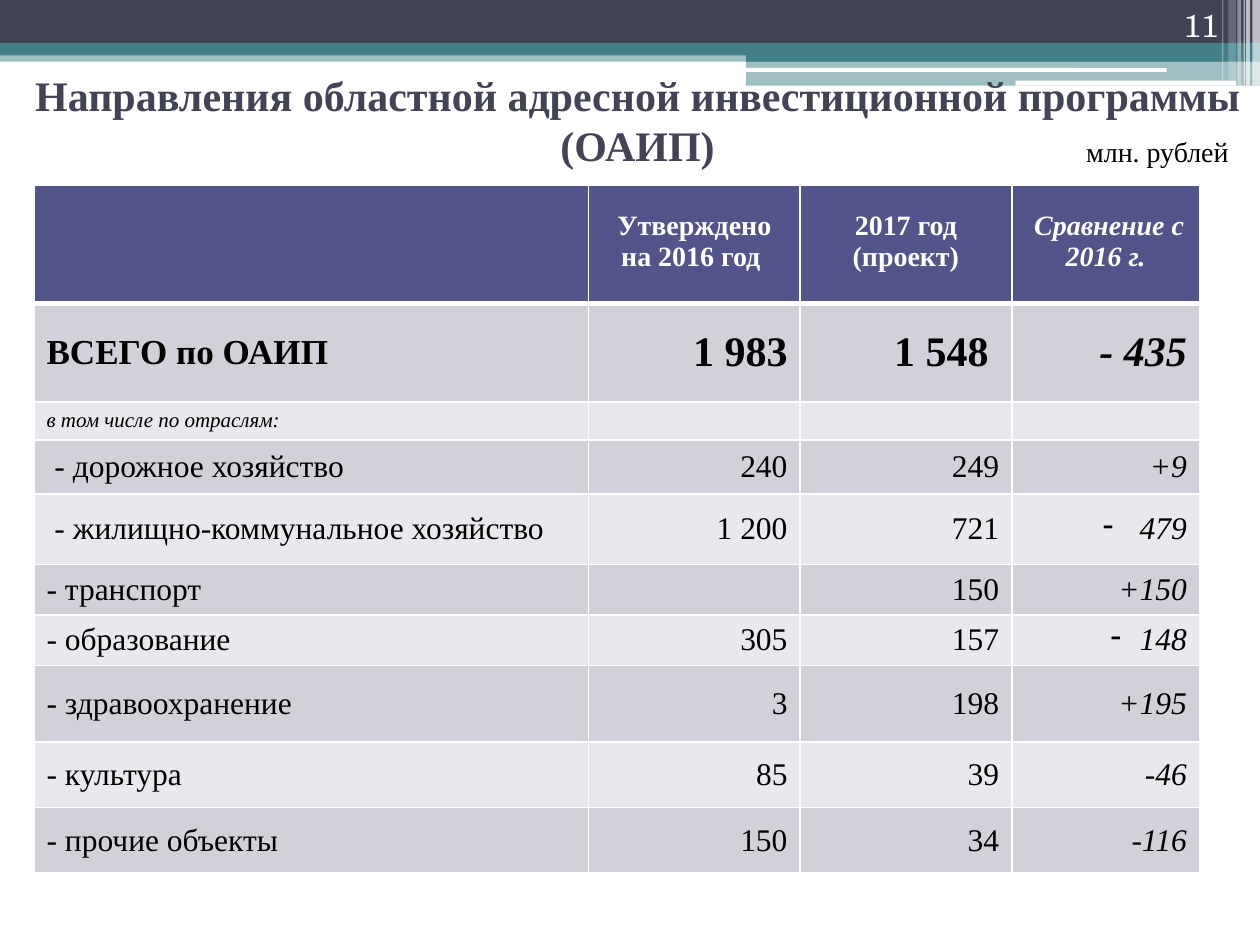
from pptx import Presentation
from pptx.dml.color import RGBColor
from pptx.enum.shapes import MSO_SHAPE
from pptx.enum.text import MSO_ANCHOR, PP_ALIGN
from pptx.oxml.ns import qn
from pptx.util import Inches, Pt
from lxml import etree

RECT, ROUND = MSO_SHAPE.RECTANGLE, MSO_SHAPE.ROUNDED_RECTANGLE
LEFT, CENTER, RIGHT = PP_ALIGN.LEFT, PP_ALIGN.CENTER, PP_ALIGN.RIGHT
TOP, MIDDLE, BOTTOM = MSO_ANCHOR.TOP, MSO_ANCHOR.MIDDLE, MSO_ANCHOR.BOTTOM

THEME = {
    "serif": "Times New Roman", "number": "TeX Gyre Schola",
    "navy": "424456", "teal": "438086", "white": "FFFFFF", "black": "000000",
    "head": "53548A", "bands": ("D1D1DA", "E9E9ED"),
    "title": 24, "label": 16, "body": 18, "total": 20, "sum": 24, "note": 12,
}

# shape, left, top, width, height, colour, opacity in percent
DECOR = [
    (RECT, 0, 0.4, 10, 0.09, "teal", 50),
    (RECT, 0, 0, 10, 0.34, "navy", 100),
    (RECT, 0, 0.34, 10, 0.1, "teal", 100),
    (RECT, 5.92, 0.39, 4.08, 0.1, "teal", 100),
    (RECT, 5.92, 0.48, 4.08, 0.2, "teal", 50),
    (ROUND, 5.91, 0.54, 3.35, 0.03, "white", 100),
    (ROUND, 8.06, 0.64, 1.75, 0.04, "white", 100),
    (RECT, 9.94, 0, 0.06, 0.68, "white", 65),
    (RECT, 9.89, 0, 0.03, 0.68, "white", 65),
    (RECT, 9.87, 0, 0.01, 0.68, "white", 60),
    (RECT, 9.82, 0, 0.03, 0.68, "white", 40),
    (RECT, 9.75, 0, 0.06, 0.64, "white", 20),
    (RECT, 9.7, 0, 0.01, 0.64, "white", 30),
]

TITLE = "Направления областной адресной инвестиционной программы\v(ОАИП)"
UNIT = " млн. рублей"
PAGE = "11"

COLS = [4.4, 1.68, 1.68, 1.49]
# A "•" before a value marks a paragraph with a dash bullet.
ROWS = [
    (0.94, "", "Утверждено на 2016 год ", "2017 год\n(проект)", " Сравнение с 2016 г."),
    (0.78, "ВСЕГО по ОАИП", "1 983", " 1 548 ", "- 435"),
    (0.28, "в том числе по отраслям:", "", "", ""),
    (0.43, " - дорожное хозяйство", "240", "249", "+9"),
    (0.56, " - жилищно-коммунальное хозяйство", "1 200", "721", "• 479"),
    (0.38, "- транспорт", "", "150", "+150"),
    (0.38, "- образование", "305", "157", "•148"),
    (0.61, "- здравоохранение", "3", "198", "+195"),
    (0.52, "- культура", "85", "39", "-46"),
    (0.52, "- прочие объекты", "150", "34", "-116"),
]
HEAD, TOTAL, NOTE = 0, 1, 2


def rgb(color):
    return RGBColor.from_string(color)


def style(par, size, color, align, bold=False, italic=False, face="serif"):
    par.alignment = align
    font = par.font
    font.name, font.size = THEME[face], Pt(size)
    font.bold, font.italic = bold, italic
    font.color.rgb = rgb(color)


def add_bar(slide, kind, x, y, w, h, color, alpha):
    bar = slide.shapes.add_shape(kind, Inches(x), Inches(y), Inches(w), Inches(h))
    bar.shadow.inherit = False
    bar.line.fill.background()
    bar.fill.solid()
    bar.fill.fore_color.rgb = rgb(THEME[color])
    if alpha < 100:
        tone = bar.fill._xPr.find(".//" + qn("a:srgbClr"))
        etree.SubElement(tone, qn("a:alpha"), val=str(alpha * 1000))


def add_text(slide, box, text, anchor, *look, **more):
    frame = slide.shapes.add_textbox(*map(Inches, box)).text_frame
    frame.word_wrap = True
    frame.vertical_anchor = anchor
    frame.text = text
    style(frame.paragraphs[0], *look, **more)


def add_dash(par):
    """Give a paragraph a hanging dash bullet."""
    props = par._p.get_or_add_pPr()
    props.set("marL", str(Inches(0.23)))
    props.set("indent", str(-Inches(0.23)))
    dash = etree.Element(qn("a:buChar"), char="-")
    props.insert(0, dash)


def set_border(cell, base):
    """Draw white cell edges, with the bottom one as wide as base points."""
    props = cell._tc.get_or_add_tcPr()
    for i, (side, width) in enumerate((("L", 1), ("R", 1), ("T", 1), ("B", base))):
        line = etree.Element(qn("a:ln" + side), w=str(Pt(width)))
        fill = etree.SubElement(line, qn("a:solidFill"))
        etree.SubElement(fill, qn("a:srgbClr"), val=THEME["white"])
        props.insert(i, line)


def cell_look(row, col):
    """Return size, colour, alignment, bold and italic for a cell."""
    if row == HEAD:
        return THEME["label"], THEME["white"], CENTER, True, col == 3
    size = THEME["body"]
    if row == TOTAL:
        size = THEME["sum" if col else "total"]
    elif row == NOTE:
        size = THEME["note"]
    align = RIGHT if col else LEFT
    return size, THEME["black"], align, row == TOTAL, col == 3 or row == NOTE


def fill_cell(cell, row, col, text):
    cell.fill.solid()
    tone = THEME["head"] if row == HEAD else THEME["bands"][(row - 1) % 2]
    cell.fill.fore_color.rgb = rgb(tone)
    set_border(cell, 3 if row == HEAD else 1)
    cell.vertical_anchor = MIDDLE
    if not text:
        cell.margin_top = cell.margin_bottom = 0  # keeps low rows low
    elif row == HEAD:
        cell.margin_top, cell.margin_bottom = 0, Inches(0.04)
    cell.text = text.removeprefix("•")
    for par in cell.text_frame.paragraphs:
        style(par, *cell_look(row, col))
        if text.startswith("•"):
            add_dash(par)


def add_grid(slide):
    high = sum(row[0] for row in ROWS)
    grid = slide.shapes.add_table(
        len(ROWS), len(COLS), Inches(0.27), Inches(1.47),
        Inches(sum(COLS)), Inches(high)).table
    for col, width in zip(grid.columns, COLS):
        col.width = Inches(width)
    for r, (height, *texts) in enumerate(ROWS):
        grid.rows[r].height = Inches(height)
        for c, text in enumerate(texts):
            fill_cell(grid.cell(r, c), r, c, text)


def main():
    deck = Presentation()
    deck.slide_width, deck.slide_height = Inches(10), Inches(7.5)
    slide = deck.slides.add_slide(deck.slide_layouts[6])
    for bar in DECOR:
        add_bar(slide, *bar)
    add_text(slide, (0.12, 0.6, 9.88, 0.7), TITLE, MIDDLE,
             THEME["title"], THEME["navy"], CENTER, bold=True)
    add_grid(slide)
    add_text(slide, (8.94, 0, 0.83, 0.4), PAGE, BOTTOM,
             THEME["body"], THEME["white"], RIGHT, face="number")
    add_text(slide, (8.13, 1.02, 1.72, 0.37), UNIT, TOP,
             THEME["label"], THEME["black"], RIGHT)
    deck.save("out.pptx")


if __name__ == "__main__":
    main()
